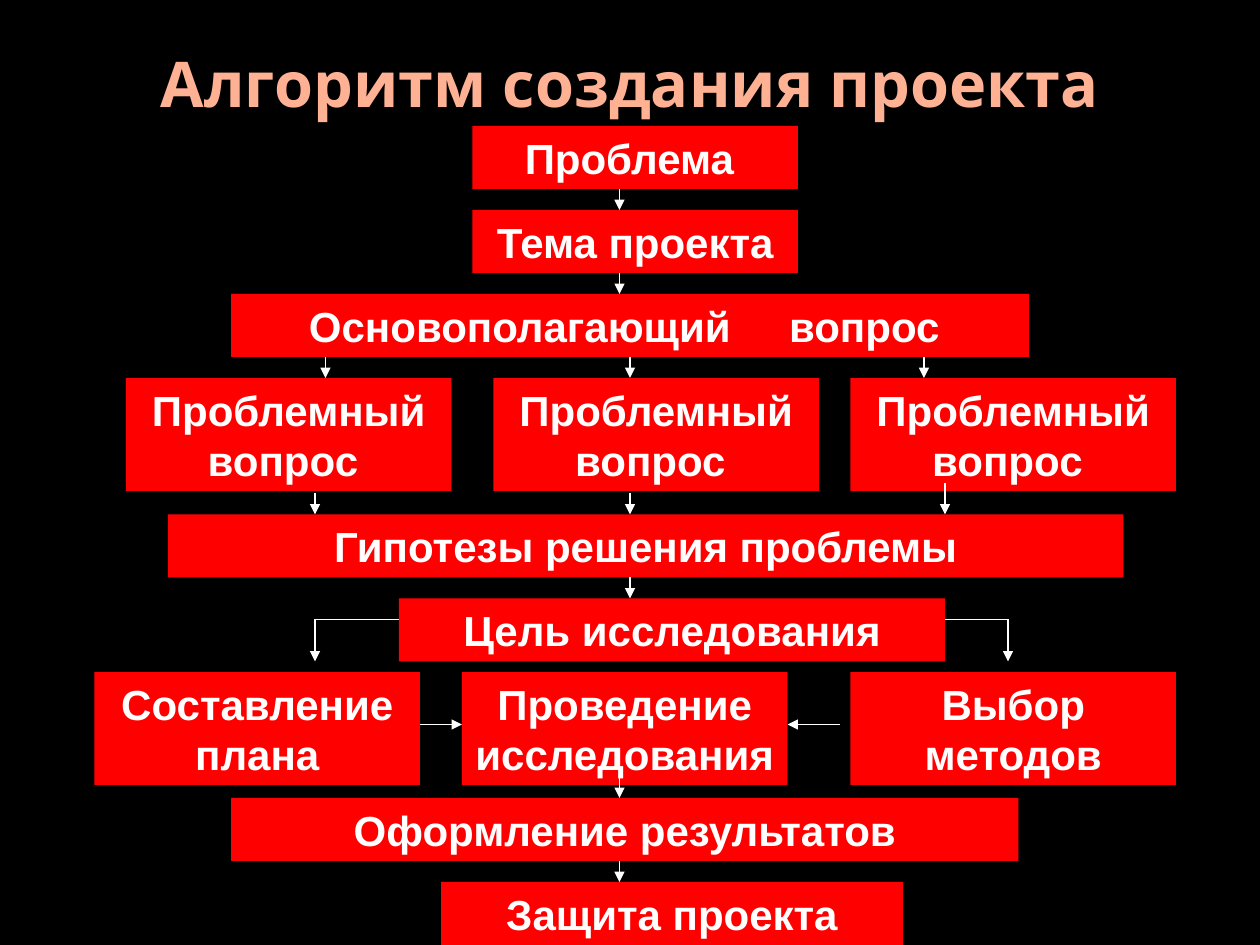
from lxml import etree
from pptx import Presentation
from pptx.dml.color import RGBColor
from pptx.enum.shapes import MSO_CONNECTOR, MSO_SHAPE
from pptx.enum.text import MSO_ANCHOR, MSO_AUTO_SIZE, PP_ALIGN
from pptx.oxml.ns import qn
from pptx.util import Pt

PX = 9525  # 96 px to the inch
BLACK = RGBColor(0x00, 0x00, 0x00)
RED = RGBColor(0xFF, 0x00, 0x00)
WHITE = RGBColor(0xFF, 0xFF, 0xFF)
PEACH = RGBColor(0xFF, 0xB1, 0x94)
RECTANGLE = MSO_SHAPE.RECTANGLE
STRAIGHT = MSO_CONNECTOR.STRAIGHT
CENTER = PP_ALIGN.CENTER
TOP, MIDDLE = MSO_ANCHOR.TOP, MSO_ANCHOR.MIDDLE
NO_AUTOFIT = MSO_AUTO_SIZE.NONE
GROW = MSO_AUTO_SIZE.SHAPE_TO_FIT_TEXT

TITLE_FONT = {"name": "Open Sans", "size": Pt(36), "bold": True}
STEP_FONT = {"name": "Arial", "size": Pt(24), "bold": True}
LINE, TWO_LINES = 48, 86  # box heights
NARROW = 248  # box width
MAIN_QUESTION = "Основополагающий"
QUESTION = "Проблемный вопрос "
WIDE_GAP = 2668  # extra width of the gap, in hundredths of a point

STEPS = [  # text, left, top, width, height
    ("Проблема ", 360, 96, NARROW, LINE),
    ("Тема проекта", 360, 160, NARROW, LINE),
    *[(QUESTION, left, 288, NARROW, TWO_LINES) for left in (96, 376, 648)],
    ("Гипотезы решения проблемы", 128, 392, 728, LINE),
    ("Цель исследования", 304, 456, 416, LINE),
    ("Проведение исследования ", 352, 512, NARROW, TWO_LINES),
    ("Составление плана", 72, 512, NARROW, TWO_LINES),
    ("Выбор методов", 648, 512, NARROW, TWO_LINES),
    ("Оформление результатов", 176, 608, 600, LINE),
    ("Защита проекта", 336, 672, 352, LINE),
]
DOWN_ARROWS = [  # x, start, end
    (472, 144, 160), (472, 208, 224),
    (248, 272, 288), (704, 272, 288),
    (240, 376, 392), (480, 376, 392), (720, 368, 392),
    (480, 440, 456),
    (240, 472, 504), (768, 472, 504),
    (472, 592, 608), (472, 656, 672),
]
SIDE_ARROWS = [(320, 352), (640, 600)]
GOAL_BRANCHES = [(304, 240), (720, 768)]


def style_run(run, font_format, color):
    for attribute, value in font_format.items():
        setattr(run.font, attribute, value)
    run.font.color.rgb = color


def add_title(slide, text):
    title = slide.shapes.title
    title.left, title.top, title.width, title.height = (
        v * PX for v in (48, 31, 864, 64))
    frame = title.text_frame
    frame.auto_size = NO_AUTOFIT
    frame.vertical_anchor = MIDDLE
    paragraph = frame.paragraphs[0]
    paragraph.alignment = CENTER
    run = paragraph.add_run()
    run.text = text
    style_run(run, TITLE_FONT, PEACH)


def add_step(slide, texts, *box):
    """Add a red box holding one run for each of the texts; return it."""
    step = slide.shapes.add_shape(RECTANGLE, *(v * PX for v in box))
    step.shadow.inherit = False
    step.fill.solid()
    step.fill.fore_color.rgb = RED
    step.line.fill.background()
    frame = step.text_frame
    frame.word_wrap = True
    frame.auto_size = GROW
    frame.vertical_anchor = TOP
    paragraph = frame.paragraphs[0]
    paragraph.alignment = CENTER
    for text in texts:
        run = paragraph.add_run()
        run.text = text
        style_run(run, STEP_FONT, WHITE)
    return step


def add_main_question(slide):
    """Add the main question, with a widened space between its words."""
    step = add_step(slide, [MAIN_QUESTION, " ", "вопрос "], 176, 224, 608, LINE)
    gap = step.text_frame.paragraphs[0].runs[1]
    gap.font._element.set("spc", str(WIDE_GAP))
    return step


def add_line(slide, x1, y1, x2, y2, arrow=True):
    line = slide.shapes.add_connector(
        STRAIGHT, *(v * PX for v in (x1, y1, x2, y2)))
    line.line.color.rgb = WHITE
    line.line.width = Pt(0.75)
    if arrow:
        etree.SubElement(line.line._get_or_add_ln(), qn("a:tailEnd"),
                         type="triangle")
    etree.SubElement(line._element.spPr, qn("a:effectLst"))
    return line


def main():
    deck = Presentation()
    deck.slide_width, deck.slide_height = 960 * PX, 720 * PX
    slide = deck.slides.add_slide(deck.slide_layouts[5])
    slide.background.fill.solid()
    slide.background.fill.fore_color.rgb = BLACK

    add_title(slide, "Алгоритм создания проекта")
    main_question = add_main_question(slide)
    for text, *box in STEPS:
        add_step(slide, [text], *box)

    for x, start, end in DOWN_ARROWS:
        add_line(slide, x, start, x, end)
    add_line(slide, 480, 272, 480, 288).begin_connect(main_question, 2)
    for start, end in SIDE_ARROWS:
        add_line(slide, start, 552, end, 552)
    for start, end in GOAL_BRANCHES:
        add_line(slide, start, 472, end, 472, arrow=False)
    deck.save("out.pptx")


if __name__ == "__main__":
    main()
